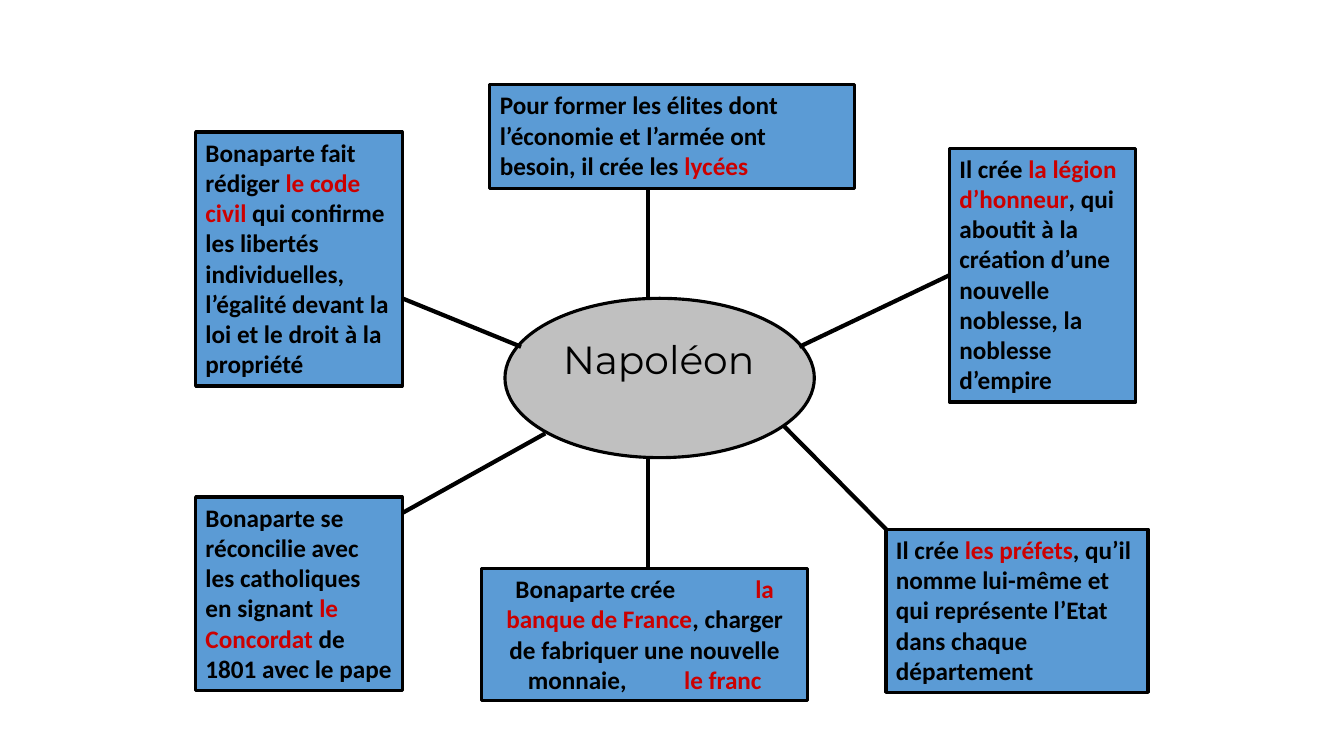
from itertools import zip_longest
from lxml.etree import SubElement as Sub
from pptx import Presentation
from pptx.dml.color import RGBColor as Rgb
from pptx.enum.shapes import MSO_CONNECTOR as Link, MSO_SHAPE as Kind
from pptx.enum.text import MSO_ANCHOR as Anchor, MSO_AUTO_SIZE as Auto, PP_ALIGN as Align
from pptx.oxml.ns import qn
from pptx.util import Pt

HUES = {"ink": "000000", "red": "CC0000", "blue": "5B9BD5", "grey": "C0C0C0"}
BODY = {"name": "Calibri", "size": Pt(18), "bold": True}
HEAD = {"name": "Montserrat", "size": Pt(28), "bold": False}
FRAME = {"word_wrap": True, "auto_size": Auto.SHAPE_TO_FIT_TEXT, "vertical_anchor": Anchor.TOP}


class Map:
    """Draws the parts of a mind map on one slide, in points."""

    def __init__(self, deck):
        self.shapes = deck.slides.add_slide(deck.slide_layouts[6]).shapes

    def hue(self, name):
        return Rgb.from_string(HUES[name])

    def apply(self, item, style):
        for key, val in style.items():
            setattr(item, key, val)

    def stroke(self, item, width):
        item.line.color.rgb = self.hue("ink")
        item.line.width = Pt(width)

    def form(self, kind, spot, fill):
        item = self.shapes.add_shape(kind, *map(Pt, spot))
        item.shadow.inherit = False
        item.fill.solid()
        item.fill.fore_color.rgb = self.hue(fill)
        self.stroke(item, 2.25)
        return item

    def piece(self, para, text, style, ink, gap=0):
        run = para.add_run()
        run.text = text
        self.apply(run.font, style)
        run.font.color.rgb = self.hue(ink)
        if gap:
            run._r.get_or_add_rPr().set("spc", str(gap * 100))

    def label(self, item, text, style, align, gaps=()):
        frame = item.text_frame
        self.apply(frame, FRAME)
        para = frame.paragraphs[0]
        para.alignment = align
        parts = text.split("*")
        for plain, key, gap in zip_longest(parts[::2], parts[1::2], gaps):
            if plain:
                self.piece(para, plain, style, "ink")
            if gap:
                self.piece(para, " ", style, "ink", gap)
            if key:
                self.piece(para, key, style, "red")

    def box(self, spot, text, align=Align.LEFT, gaps=()):
        item = self.form(Kind.RECTANGLE, spot, "blue")
        self.label(item, text, BODY, align, gaps)

    def title(self, spot, text):
        item = self.shapes.add_textbox(*map(Pt, spot))
        self.label(item, text, HEAD, Align.CENTER)

    def link(self, ends):
        item = self.shapes.add_connector(Link.STRAIGHT, *map(Pt, ends))
        self.stroke(item, 3)
        Sub(item._element.spPr, qn("a:effectLst"))


BOXES = [
    ((139.7, 94.3, 147.6, 181.4),
     "Bonaparte fait rédiger *le code civil* qui confirme les libertés individuelles, "
     "l’égalité devant la loi et le droit à la propriété"),
    ((349.9, 60.5, 260.6, 74.2),
     "Pour former les élites dont l’économie et l’armée ont besoin, il crée les *lycées"),
    ((678.2, 105.8, 133.2, 181.4),
     "Il crée *la légion d’honneur*, qui aboutit à la création d’une nouvelle noblesse, "
     "la noblesse d’empire"),
    ((139.7, 355, 147.6, 138.2),
     "Bonaparte se réconcilie avec les catholiques en signant *le Concordat* de 1801 avec le pape"),
    ((344.2, 406.1, 232.6, 94.3),
     "Bonaparte crée*la banque de France*, charger de fabriquer une nouvelle monnaie,*le franc",
     Align.CENTER, (53, 37)),
    ((632.9, 378, 187.2, 116.6),
     "Il crée *les préfets*, qu’il nomme lui-même et qui représente l’Etat dans chaque département"),
]
LINKS = [
    (463, 213.1, 463, 133.9),
    (571, 247.7, 678.2, 196.6),
    (463, 406.1, 463, 326.9),
    (372.2, 247.7, 287.3, 213.1),
    (632.9, 378, 559.4, 303.8),
    (287.3, 366.5, 389.5, 309.6),
]


def main():
    deck = Presentation()
    deck.slide_width, deck.slide_height = Pt(960), Pt(540)
    board = Map(deck)
    board.form(Kind.OVAL, (360.7, 213.1, 221, 113.8), "grey")
    board.title((366.5, 236.2, 215.3, 41), "Napoléon ")
    for box in BOXES:
        board.box(*box)
    for ends in LINKS:
        board.link(ends)
    deck.save("out.pptx")


if __name__ == "__main__":
    main()
